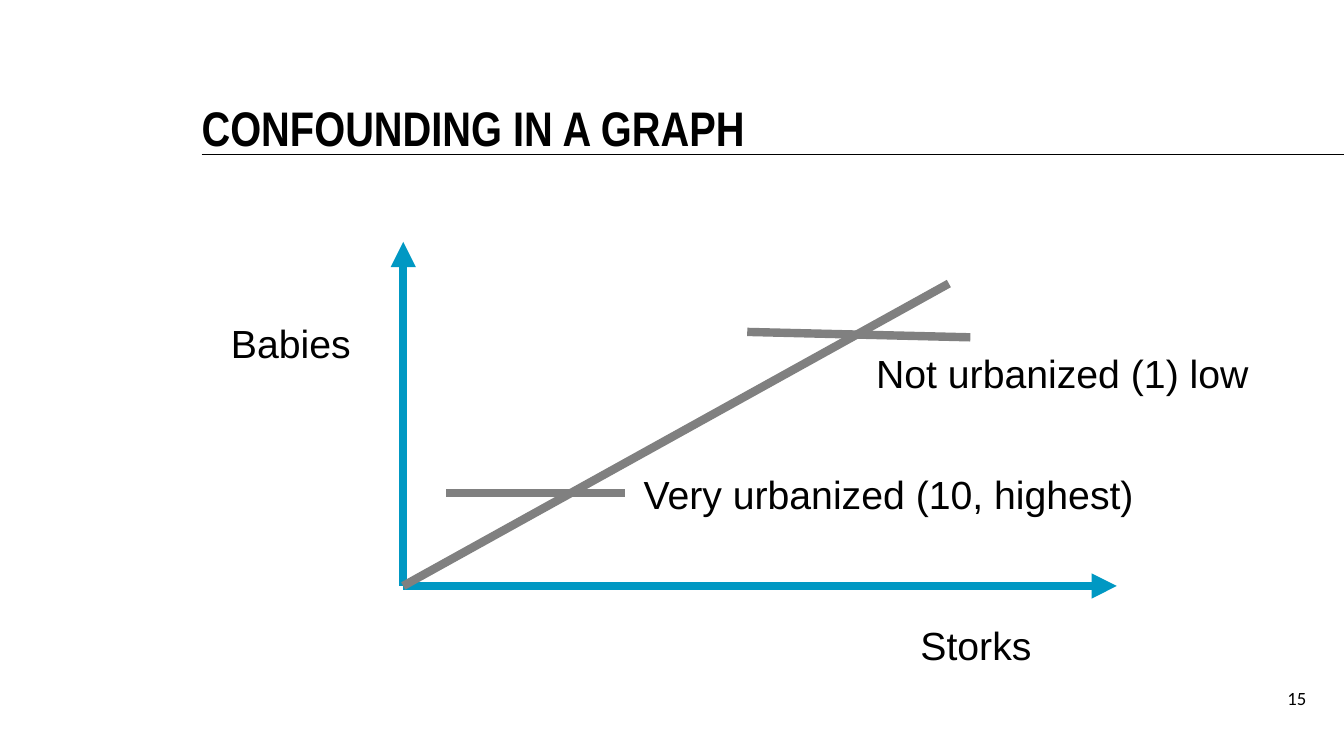
from dataclasses import dataclass

from lxml import etree
from pptx import Presentation
from pptx.dml.color import RGBColor
from pptx.enum.shapes import MSO_CONNECTOR
from pptx.enum.text import MSO_ANCHOR, MSO_AUTO_SIZE, PP_ALIGN
from pptx.oxml.ns import qn
from pptx.util import Inches, Pt

STRAIGHT = MSO_CONNECTOR.STRAIGHT
TOP, BOTTOM = MSO_ANCHOR.TOP, MSO_ANCHOR.BOTTOM
LEFT, RIGHT = PP_ALIGN.LEFT, PP_ALIGN.RIGHT
NO_AUTOFIT = MSO_AUTO_SIZE.NONE


@dataclass(frozen=True)
class Theme:
    black: RGBColor = RGBColor(0x00, 0x00, 0x00)
    axis: RGBColor = RGBColor(0x00, 0x98, 0xC3)
    trend: RGBColor = RGBColor(0x80, 0x80, 0x80)
    title_font: str = "Arial Narrow"
    label_font: str = "Arial"
    number_font: str = "Calibri"
    title_size: int = 26
    label_size: int = 21
    number_size: int = 10
    rule_width: int = 1
    graph_width: float = 4.5


THEME = Theme()


def set_attrs(obj, values):
    for name, value in values.items():
        setattr(obj, name, value)


def place(sp, x, y, w, h):
    values = {"left": x, "top": y, "width": w, "height": h}
    set_attrs(sp, {name: Inches(v) for name, v in values.items()})


def write(sp, text, font, size, bold=False, align=LEFT, anchor=TOP,
          spacing=None, insets=(0.1, 0.05, 0.1, 0.05)):
    tf = sp.text_frame
    set_attrs(tf, {"word_wrap": True, "auto_size": NO_AUTOFIT,
                   "vertical_anchor": anchor})
    sides = ("margin_left", "margin_top", "margin_right", "margin_bottom")
    set_attrs(tf, {side: Inches(v) for side, v in zip(sides, insets)})
    p = tf.paragraphs[0]
    set_attrs(p, {"alignment": align, "space_before": Pt(0)})
    if spacing:
        p.line_spacing = Pt(spacing)
    r = p.add_run()
    r.text = text
    set_attrs(r.font, {"name": font, "size": Pt(size), "bold": bold})
    r.font.color.rgb = THEME.black


def add_line(s, start, end, color, width, arrow=False):
    sp = s.shapes.add_connector(STRAIGHT, *map(Inches, (*start, *end)))
    sp.line.color.rgb = color
    sp.line.width = Pt(width)
    if arrow:
        etree.SubElement(sp.line._get_or_add_ln(), qn("a:tailEnd"), type="triangle")
    etree.SubElement(sp._element.spPr, qn("a:effectLst"))


def add_header(s, x, y, w, h):
    add_line(s, (x, y + h - 0.01), (x + w, y + h - 0.01),
             THEME.black, THEME.rule_width)
    title = s.shapes.title
    place(title, x, y, w - 0.32, h)
    write(title, "CONFOUNDING IN A GRAPH", THEME.title_font, THEME.title_size,
          bold=True, anchor=BOTTOM, spacing=25, insets=(0, 0, 0, 0))


def add_graph(s, x, y, w, h):
    lines = [
        ((0, h), (0, 0), THEME.axis, True),
        ((0, h), (w, h), THEME.axis, True),
        ((0, h), (4.06, 0.31), THEME.trend, False),
        ((2.56, 0.67), (4.22, 0.71), THEME.trend, False),
        ((0.32, 1.87), (1.65, 1.87), THEME.trend, False),
    ]
    for (x1, y1), (x2, y2), color, arrow in lines:
        add_line(s, (x + x1, y + y1), (x + x2, y + y2),
                 color, THEME.graph_width, arrow)

    labels = [
        ("Babies", -1.38, 0.53, 1.25, 0.45),
        ("Storks", 3.75, 2.77, 1.31, 0.45),
        ("Not urbanized (1) low", 3.42, 0.75, 3.02, 0.45),
        ("Very urbanized (10, highest)", 1.69, 1.65, 3.88, 0.81),
    ]
    for text, dx, dy, width, height in labels:
        sp = s.shapes.add_textbox(0, 0, 0, 0)
        place(sp, x + dx, y + dy, width, height)
        write(sp, text, THEME.label_font, THEME.label_size)


def add_page_number(s, x, y, w, h):
    sp = s.shapes.add_textbox(0, 0, 0, 0)
    place(sp, x, y, w, h)
    write(sp, "15", THEME.number_font, THEME.number_size, align=RIGHT,
          spacing=15, insets=(0.1, 0.01, 0, 0.05))


def main():
    prs = Presentation()
    width = Inches(10)
    set_attrs(prs, {"slide_width": width, "slide_height": width * 9 // 16})
    s = prs.slides.add_slide(prs.slide_layouts.get_by_name("Title Only"))
    add_header(s, 1.5, 0.56, 8.51, 0.6)
    add_graph(s, 3, 1.8, 5.31, 2.56)
    add_page_number(s, 9.31, 5.06, 0.41, 0.39)
    prs.save("out.pptx")


if __name__ == "__main__":
    main()
